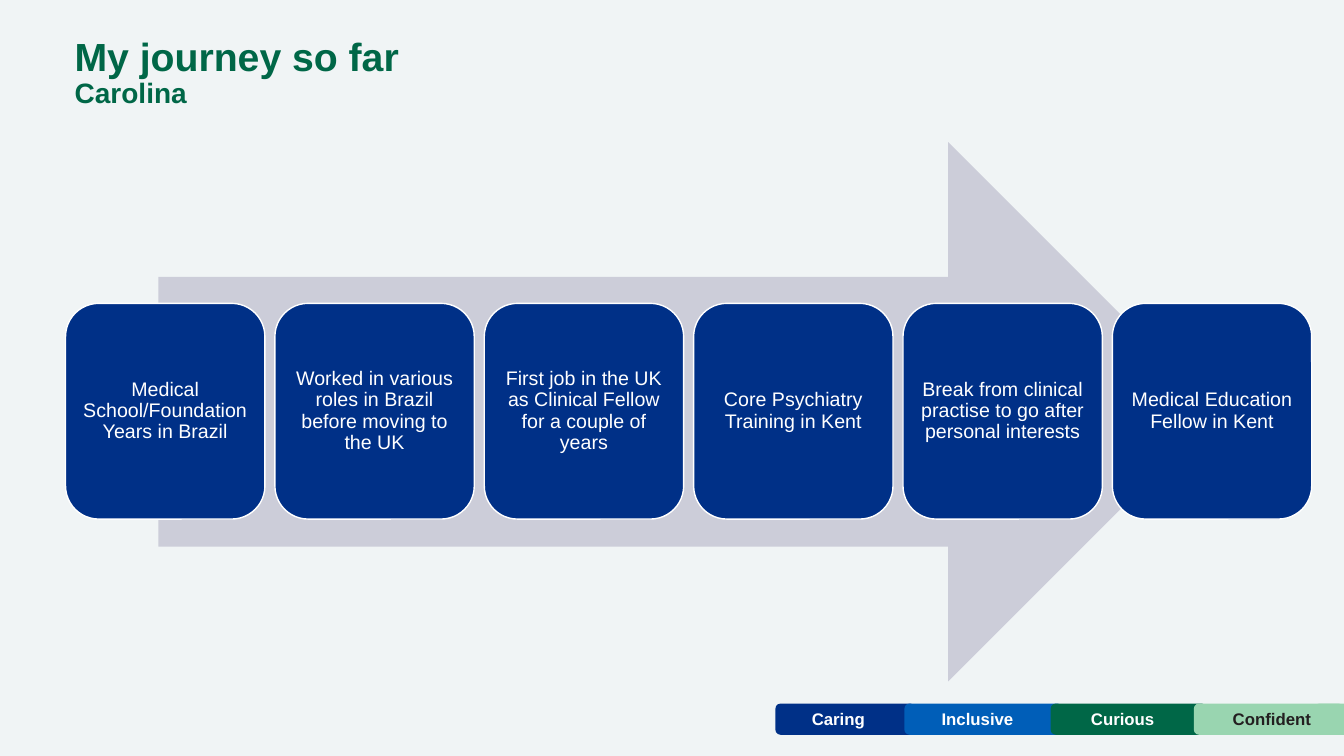
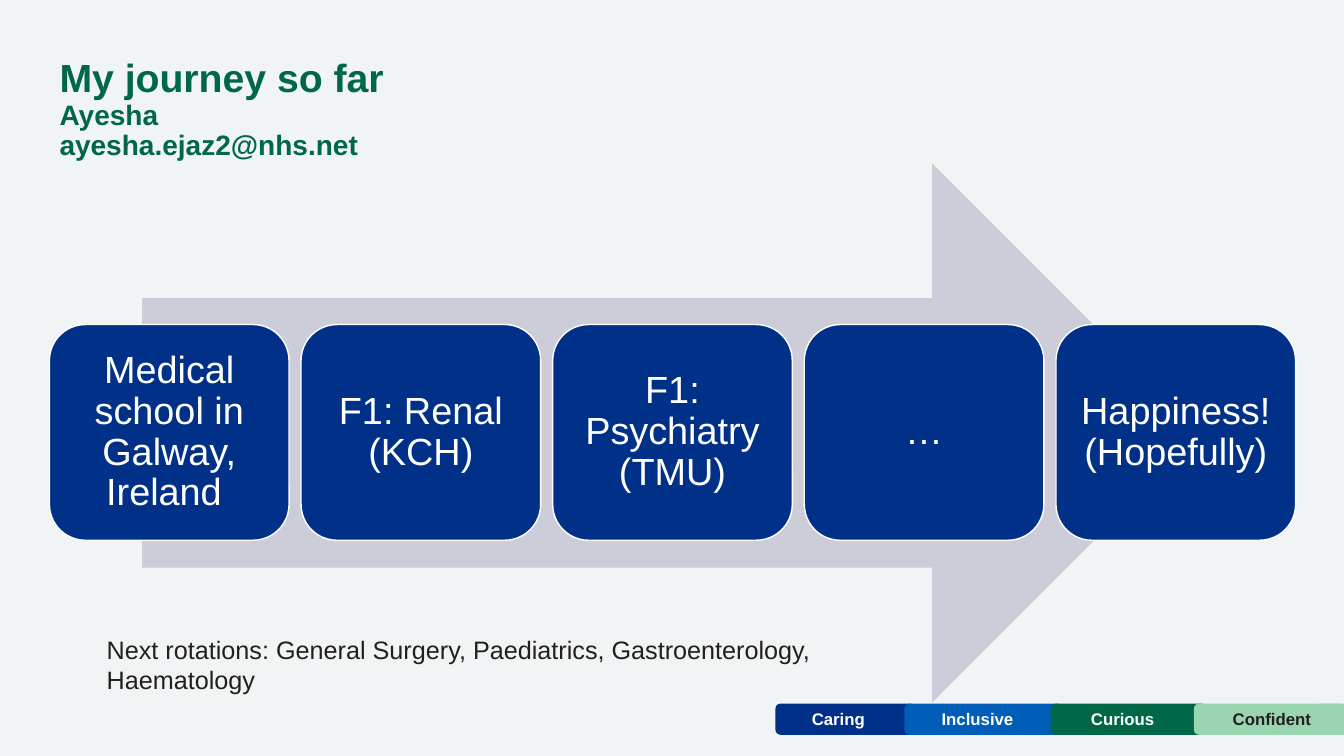
from pptx import Presentation
from pptx.dml.color import RGBColor
from pptx.enum import shapes, text
from pptx.util import Inches, Pt

FONT = "Arial"
COLORS = {
    "page": "F0F4F5", "navy": "003087", "blue": "005EB8", "green": "006747",
    "mint": "99D5B0", "arrow": "CCCDD9", "white": "FFFFFF", "ink": "231F20",
}
VALUES = [
    ("Caring", 7.69, 1.39, 7.74, "navy", "white"),
    ("Inclusive", 8.97, 1.57, 9.12, "blue", "white"),
    ("Curious", 10.42, 1.55, 10.56, "green", "white"),
    ("Confident", 11.84, 1.49, 12.04, "mint", "ink"),
]
SPAN = 12.36
GAP = 0.05
KIND = shapes.MSO_SHAPE
MID = text.MSO_ANCHOR.MIDDLE
CENTER = text.PP_ALIGN.CENTER


def rgb(name):
    return RGBColor.from_string(COLORS[name])


class Deck:
    def __init__(self):
        self.prs = Presentation()
        self.prs.slide_width = Inches(13.33)
        self.prs.slide_height = Inches(7.5)
        fill = self.prs.slide_master.background.fill
        fill.solid()
        fill.fore_color.rgb = rgb("page")
        self.slide = None

    def start(self, x, y, w, h, lines):
        self.slide = self.prs.slides.add_slide(self.prs.slide_layouts[5])
        self.title(x, y, w, h, lines)
        self.footer()

    def frame(self, shape, inset, anchor):
        frame = shape.text_frame
        frame.word_wrap = True
        frame.auto_size = text.MSO_AUTO_SIZE.NONE
        frame.vertical_anchor = anchor
        frame.margin_left = frame.margin_right = Inches(inset)
        frame.margin_top = frame.margin_bottom = Inches(min(inset, 0.05))
        return frame

    def run(self, para, words, size, color, bold=False):
        run = para.add_run()
        run.text = words
        font = run.font
        font.name, font.size, font.bold = FONT, Pt(size), bold
        font.color.rgb = rgb(color)

    def title(self, x, y, w, h, lines):
        shape = self.slide.shapes.title
        shape.left, shape.top = Inches(x), Inches(y)
        shape.width, shape.height = Inches(w), Inches(h)
        frame = self.frame(shape, 0.1, text.MSO_ANCHOR.TOP)
        para = frame.paragraphs[0]
        self.run(para, "My journey so far", 28, "green", True)
        para.add_line_break()
        for i, line in enumerate(lines):
            if i:
                para = frame.add_paragraph()
            self.run(para, line, 20, "green", True)
        for para in frame.paragraphs:
            para.alignment = text.PP_ALIGN.LEFT
            para.line_spacing = 0.9

    def shape(self, kind, x, y, w, h, fill, line=None):
        shape = self.slide.shapes.add_shape(
            kind, Inches(x), Inches(y), Inches(w), Inches(h))
        shape.shadow.inherit = False
        shape.fill.solid()
        shape.fill.fore_color.rgb = rgb(fill)
        if line:
            shape.line.color.rgb = rgb(line)
            shape.line.width = Pt(1)
        else:
            shape.line.fill.background()
        return shape

    def label(self, x, y, w, h, words, size, color, bold=False,
              align=CENTER, inset=0, anchor=MID):
        box = self.slide.shapes.add_textbox(
            Inches(x), Inches(y), Inches(w), Inches(h))
        para = self.frame(box, inset, anchor).paragraphs[0]
        para.alignment = align
        self.run(para, words, size, color, bold)

    def footer(self):
        end = self.shape(KIND.ROUND_2_SAME_RECTANGLE,
                         13.03, 6.98, 0.31, 0.31, "mint")
        end.rotation = 270
        for _, x, w, _, fill, _ in VALUES:
            self.shape(KIND.ROUNDED_RECTANGLE, x, 6.98, w, 0.31, fill)
        for word, _, _, x, _, color in VALUES:
            self.label(x, 7.03, 1.15, 0.2, word, 12, color, True)

    def journey(self, x, y, steps, size, inset):
        self.shape(KIND.RIGHT_ARROW, x + 0.92, y - 1.6, 10.51, 5.35, "arrow")
        count = len(steps)
        width = SPAN / (count + (count - 1) * GAP)
        for i, step in enumerate(steps):
            card = self.shape(KIND.ROUNDED_RECTANGLE,
                              x + i * width * (1 + GAP), y, width, 2.14,
                              "navy", "white")
            para = self.frame(card, inset, MID).paragraphs[0]
            para.alignment = CENTER
            para.line_spacing = 0.9
            self.run(para, step, size, "white")

    def note(self, x, y, w, h, words):
        self.label(x, y, w, h, words, 18, "ink", align=text.PP_ALIGN.LEFT,
                   inset=0.1, anchor=text.MSO_ANCHOR.TOP)


def main():
    deck = Deck()

    deck.start(0.64, 0.32, 9.16, 0.85, ["Carolina"])
    deck.journey(0.65, 3.01, [
        "Medical School/Foundation Years in Brazil",
        "Worked in various roles in Brazil before moving to the UK",
        "First job in the UK as Clinical Fellow for a couple of years",
        "Core Psychiatry Training in Kent",
        "Break from clinical practise to go after personal interests",
        "Medical Education Fellow in Kent",
    ], 14, 0.06)

    deck.start(0.49, 0.53, 9.51, 1.29, ["Ayesha", "ayesha.ejaz2@nhs.net"])
    deck.journey(0.49, 3.22, [
        "Medical school in Galway, Ireland ",
        "F1: Renal (KCH)",
        "F1: Psychiatry (TMU)",
        "…",
        "Happiness! (Hopefully)",
    ], 27, 0.11)
    deck.note(0.96, 6.24, 7.57, 0.71,
              "Next rotations: General Surgery, Paediatrics, "
              "Gastroenterology, Haematology")

    deck.prs.save("out.pptx")


if __name__ == "__main__":
    main()
